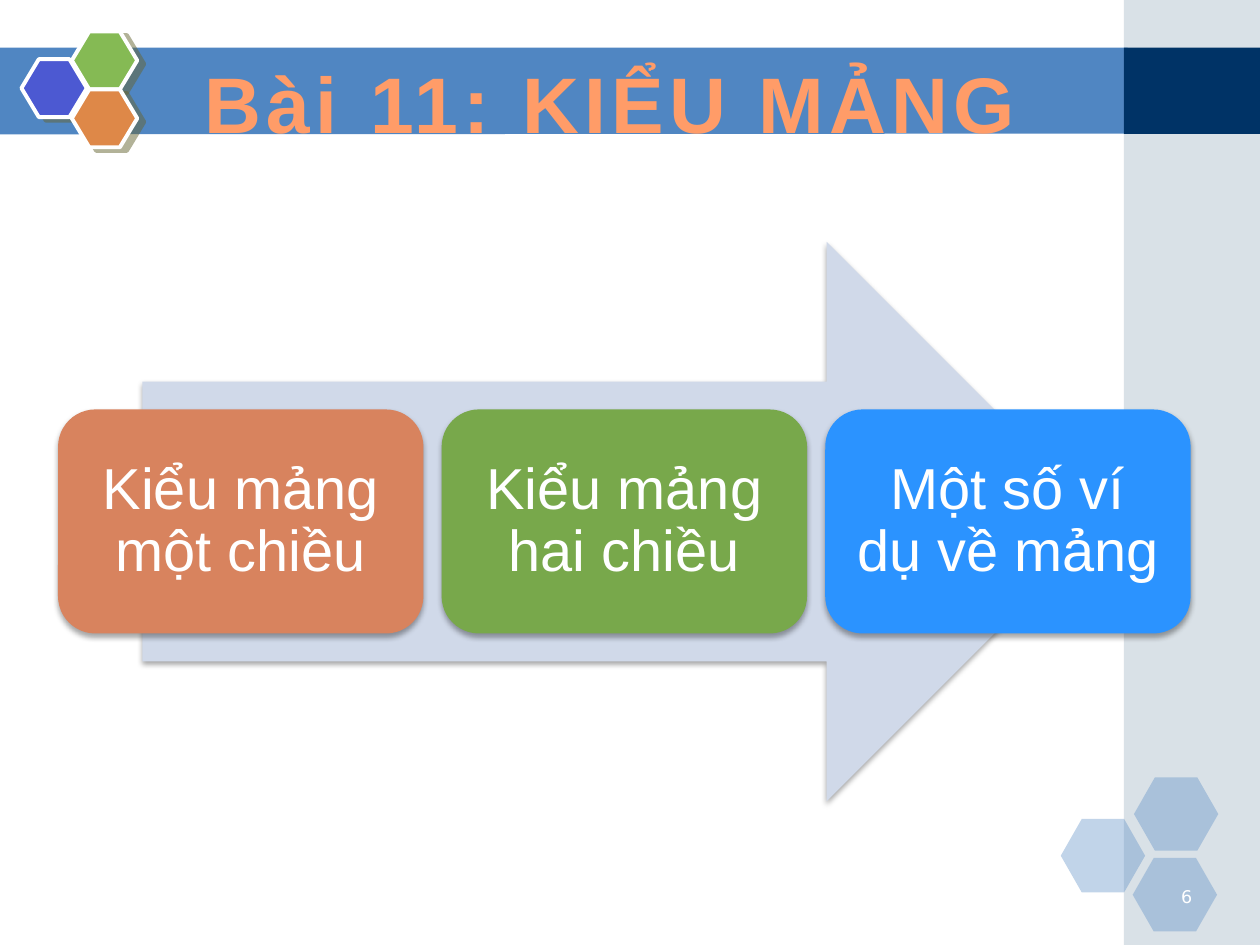
from typing import NamedTuple, Optional

from lxml import etree
from pptx import Presentation
from pptx import util as u
from pptx.dml.color import RGBColor
from pptx.enum import shapes as sh, text as tx
from pptx.oxml.ns import qn

COLORS = {
    "band": "5086C2", "side": "A0B5C4", "navy": "003366", "white": "FFFFFF",
    "indigo": "4C59D2", "green": "85BA54", "orange": "DE8848",
    "title": "FF9C68", "arrow": "D0D9E9", "logo_shadow": "666633", "black": "000000",
    "one_dim": "D8835E", "two_dim": "78A84B", "examples": "2B93FF",
}
SHAPE = sh.MSO_SHAPE
ALIGN = tx.PP_ALIGN


class Box(NamedTuple):
    left: float
    top: float
    width: float
    height: float


class Shadow(NamedTuple):
    color: str
    opacity: int
    blur: float
    distance: float
    angle: int


class Topic(NamedTuple):
    label: str
    color: str


class Hexagon(NamedTuple):
    left: float
    top: float
    color: str


LOGO_SHADOW = Shadow("logo_shadow", 50, 0, 4.5, 27)
SOFT_SHADOW = Shadow("black", 35, 3.1, 1.8, 90)

LOGO = [Hexagon(12.24, 33.84, "indigo"), Hexagon(41.04, 18, "green"),
        Hexagon(41.04, 51.1, "orange")]
CORNER = [Hexagon(606.2, 468, "band"), Hexagon(648, 444.2, "band"),
          Hexagon(647.3, 490.3, "band")]
TOPICS = [Topic("Kiểu mảng một chiều", "one_dim"),
          Topic("Kiểu mảng hai chiều", "two_dim"),
          Topic("Một số ví dụ về mảng", "examples")]


def rgb(name: str) -> RGBColor:
    return RGBColor.from_string(COLORS[name])


def add_alpha(color_element, percent: int) -> None:
    etree.SubElement(color_element, qn("a:alpha")).set("val", str(percent * 1000))


def paint(shape, color: str, opacity: int = 100, outline: float = 0,
          shadow: Optional[Shadow] = None) -> None:
    """Set fill, white outline and outer shadow."""
    shape.fill.solid()
    shape.fill.fore_color.rgb = rgb(color)
    if opacity < 100:
        add_alpha(shape._element.spPr.find(".//" + qn("a:srgbClr")), opacity)
    if outline:
        shape.line.color.rgb = rgb("white")
        shape.line.width = u.Pt(outline)
    else:
        shape.line.fill.background()
    shape.shadow.inherit = False
    if shadow:
        effects = shape._element.spPr.find(qn("a:effectLst"))
        outer = etree.SubElement(effects, qn("a:outerShdw"))
        values = {"blurRad": u.Pt(shadow.blur), "dist": u.Pt(shadow.distance),
                  "dir": shadow.angle * 60000, "algn": "ctr", "rotWithShape": 0}
        for key, value in values.items():
            outer.set(key, str(value))
        tint = etree.SubElement(outer, qn("a:srgbClr"))
        tint.set("val", COLORS[shadow.color])
        add_alpha(tint, shadow.opacity)


def add_figure(slide, kind, box: Box, color: str, **finish):
    figure = slide.shapes.add_shape(kind, *map(u.Pt, box))
    paint(figure, color, **finish)
    return figure


def add_hexagons(slide, cells: list[Hexagon], width: float, height: float,
                 slant: float, **finish) -> None:
    for cell in cells:
        hexagon = add_figure(slide, SHAPE.HEXAGON, Box(cell.left, cell.top, width, height),
                             cell.color, **finish)
        hexagon.adjustments[0] = slant


def write(shape, words: str, color: str, frame_format: dict, font_format: dict,
          align, line_spacing: float = 1):
    """Put one formatted paragraph into a shape and return its run."""
    frame = shape.text_frame
    for key, value in {"word_wrap": True, **frame_format}.items():
        setattr(frame, key, value)
    paragraph = frame.paragraphs[0]
    paragraph.alignment = align
    paragraph.line_spacing = line_spacing
    run = paragraph.add_run()
    run.text = words
    for key, value in font_format.items():
        setattr(run.font, key, value)
    run.font.color.rgb = rgb(color)
    return run


def add_background(slide) -> None:
    builder = slide.shapes.build_freeform(u.Pt(-0.7), u.Pt(27.3))
    builder.add_line_segments([(u.Pt(x), u.Pt(y)) for x, y in
                               [(644.4, 27.3), (644.4, 76.4), (-0.7, 76.8)]])
    paint(builder.convert_to_shape(), "band")
    add_figure(slide, SHAPE.RECTANGLE, Box(642.2, 0, 77.8, 540), "side", opacity=40)
    add_figure(slide, SHAPE.RECTANGLE, Box(642.2, 27.3, 77.8, 49.2), "navy")
    add_hexagons(slide, CORNER, 48.2, 42, 0.286, opacity=35)
    add_hexagons(slide, LOGO, 37.4, 33.1, 0.3, outline=2.25, shadow=LOGO_SHADOW)


def add_headings(slide) -> None:
    number = slide.shapes.add_textbox(*map(u.Pt, Box(652.3, 502.6, 36, 18)))
    write(number, "6", "white", {}, {"name": "DejaVu Sans", "size": u.Pt(10)}, ALIGN.RIGHT)
    title = slide.shapes.add_textbox(*map(u.Pt, Box(-3.6, 23.8, 720, 59.8)))
    title_run = write(title, "Bài 11: KIỂU MẢNG ", "title", {"margin_top": u.Pt(7.6)},
                      {"name": "Arial", "size": u.Pt(45), "bold": True}, ALIGN.CENTER)
    title_run._r.get_or_add_rPr().set("spc", "300")


def add_topics(slide) -> None:
    add_figure(slide, SHAPE.RIGHT_ARROW, Box(81.4, 138.2, 550.8, 319.7), "arrow",
               shadow=SOFT_SHADOW)
    left, width, gap = 33.2, 208.8, 10.4
    sides = ("left", "top", "right", "bottom")
    frame_format = {f"margin_{side}": u.Pt(10) for side in sides}
    frame_format["vertical_anchor"] = tx.MSO_ANCHOR.MIDDLE
    for index, topic in enumerate(TOPICS):
        card = add_figure(slide, SHAPE.ROUNDED_RECTANGLE,
                          Box(left + index * (width + gap), 234, width, 128),
                          topic.color, shadow=SOFT_SHADOW)
        write(card, topic.label, "white", frame_format,
              {"name": "Arial", "size": u.Pt(33)}, ALIGN.CENTER, line_spacing=0.9)


def main() -> None:
    deck = Presentation()
    deck.slide_width, deck.slide_height = u.Pt(720), u.Pt(540)
    slide = deck.slides.add_slide(deck.slide_layouts[6])
    add_background(slide)
    add_headings(slide)
    add_topics(slide)
    deck.save("out.pptx")


if __name__ == "__main__":
    main()
